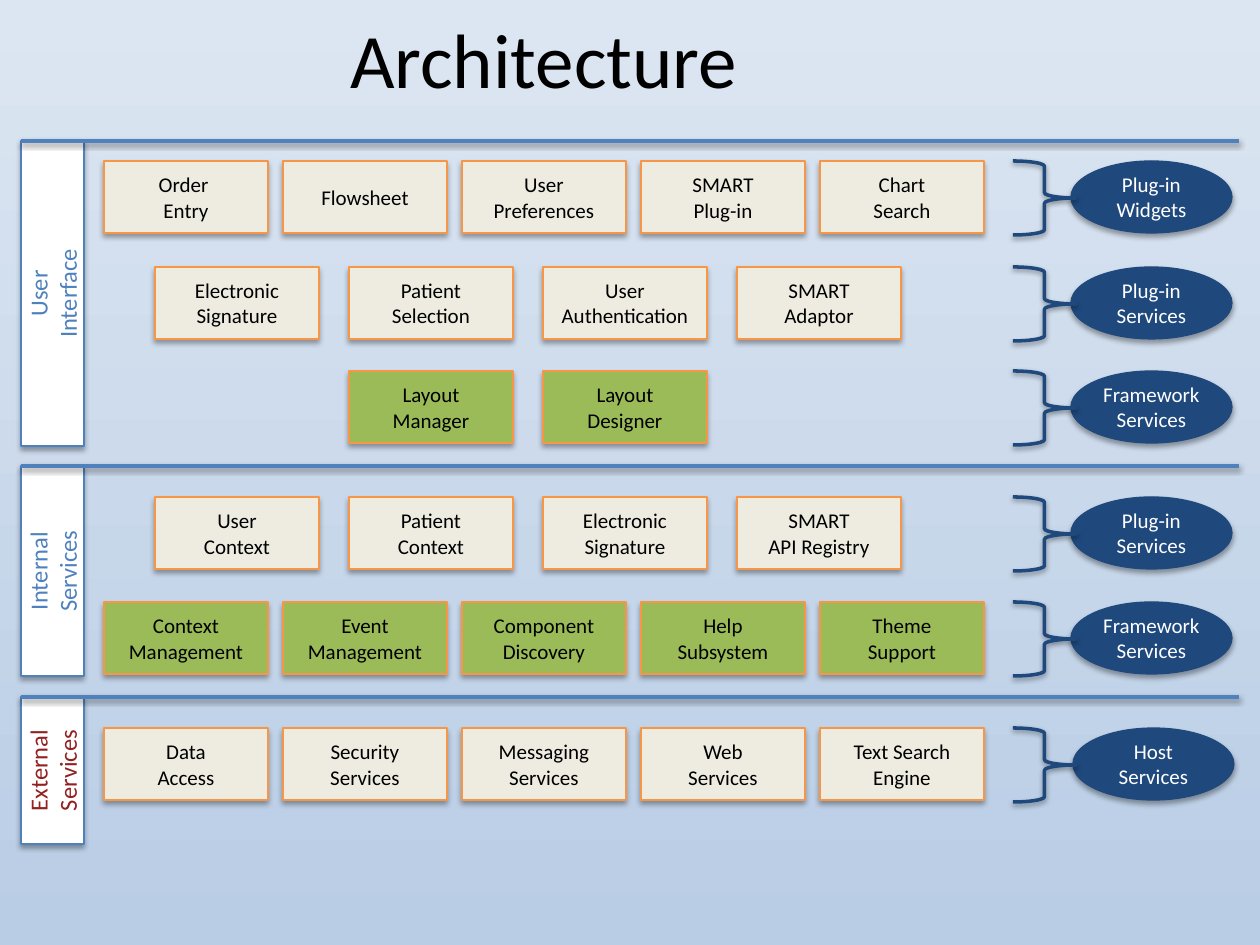
from dataclasses import dataclass

from lxml.etree import SubElement
from pptx import Presentation
from pptx.dml.color import RGBColor
from pptx.enum.shapes import MSO_CONNECTOR, MSO_SHAPE
from pptx.enum.text import MSO_ANCHOR, PP_ALIGN
from pptx.oxml.ns import qn
from pptx.util import Emu, Pt

EMU_PER_PX = 914400 / 126


@dataclass(frozen=True)
class Theme:
    font: str = "Calibri"
    sky_top: str = "DCE6F2"
    sky_bottom: str = "B9CDE5"
    black: str = "000000"
    white: str = "FFFFFF"
    blue: str = "4F81BD"
    navy: str = "1F497D"
    red: str = "922122"
    orange: str = "F79646"
    cream: str = "EEECE1"
    green: str = "9BBB59"
    title_size: int = 44
    tab_size: int = 14
    box_size: int = 12
    thin: float = 0.75
    thick: float = 2


THEME = Theme()


@dataclass(frozen=True)
class Grid:
    left: int
    pitch: int


@dataclass(frozen=True)
class Shadow:
    alpha: int
    distance: float


@dataclass(frozen=True)
class Layer:
    label: str
    top: int
    height: int
    color: str


@dataclass(frozen=True)
class Row:
    top: int
    grid: Grid
    boxes: tuple[str, ...]
    group: str
    fill: str = THEME.cream
    first_column: int = 0
    group_left: int = 1071


FIVE_COLUMNS = Grid(104, 179)
FOUR_COLUMNS = Grid(155, 194)
SOLID_SHADOW = Shadow(35, 1.8)
LINE_SHADOW = Shadow(38, 1.6)
LAYER_LEFT, LAYER_RIGHT, TAB_WIDTH = 21, 1239, 63
BOX_WIDTH, ROW_HEIGHT = 164, 72
GROUP_WIDTH = 161
BRACE_LEFT, BRACE_WIDTH, BRACE_HEIGHT = 1013, 63, 74

LAYERS = (
    Layer("User\nInterface", 141, 305, THEME.blue),
    Layer("Internal\nServices", 466, 210, THEME.blue),
    Layer("External\nServices", 697, 147, THEME.red),
)

ROWS = (
    Row(161, FIVE_COLUMNS,
        ("Order \nEntry", "Flowsheet", "User Preferences", "SMART\nPlug-in", "Chart\nSearch"),
        "Plug-in\nWidgets"),
    Row(267, FOUR_COLUMNS,
        ("Electronic\nSignature", "Patient\nSelection", "User\nAuthentication",
         "SMART\nAdaptor"),
        "Plug-in\nServices"),
    Row(371, FOUR_COLUMNS, ("Layout\nManager", "Layout\nDesigner"),
        "Framework\nServices", THEME.green, first_column=1),
    Row(497, FOUR_COLUMNS,
        ("User\nContext", "Patient\nContext", "Electronic\nSignature", "SMART\nAPI Registry"),
        "Plug-in\nServices"),
    Row(602, FIVE_COLUMNS,
        ("Context\nManagement", "Event\nManagement", "Component\nDiscovery",
         "Help\nSubsystem", "Theme\nSupport"),
        "Framework\nServices", THEME.green),
    Row(728, FIVE_COLUMNS,
        ("Data\nAccess", "Security\nServices", "Messaging\nServices", "Web\nServices",
         "Text Search Engine"),
        "Host\nServices", group_left=1073),
)


def px(length: int) -> Emu:
    return Emu(round(length * EMU_PER_PX))


def rgb(color: str) -> RGBColor:
    return RGBColor.from_string(color)


def add_shadow(effects, shadow: Shadow) -> None:
    outer = SubElement(effects, qn("a:outerShdw"), blurRad=str(Pt(3.1)),
                       dist=str(Pt(shadow.distance)), dir="5400000", rotWithShape="0")
    color = SubElement(outer, qn("a:srgbClr"), val=THEME.black)
    SubElement(color, qn("a:alpha"), val=str(shadow.alpha * 1000))


def set_line(line, color: str, width: float) -> None:
    line.color.rgb = rgb(color)
    line.width = Pt(width)


def write(frame, text: str, size: int, color: str, wrap: bool = True) -> None:
    frame_format = {"text": text, "word_wrap": wrap, "vertical_anchor": MSO_ANCHOR.MIDDLE}
    font_format = {"name": THEME.font, "size": Pt(size)}
    for attribute, value in frame_format.items():
        setattr(frame, attribute, value)
    for paragraph in frame.paragraphs:
        paragraph.alignment = PP_ALIGN.CENTER
        for run in paragraph.runs:
            for attribute, value in font_format.items():
                setattr(run.font, attribute, value)
            run.font.color.rgb = rgb(color)


def add_block(slide, kind: MSO_SHAPE, left: int, top: int, width: int, height: int,
              line: str, fill: str | None = None):
    """Add a shadowed shape; one without a fill is drawn as a thick outline."""
    block = slide.shapes.add_shape(kind, px(left), px(top), px(width), px(height))
    if fill:
        block.fill.solid()
        block.fill.fore_color.rgb = rgb(fill)
    else:
        block.fill.background()
    set_line(block.line, line, THEME.thin if fill else THEME.thick)
    block.shadow.inherit = False
    add_shadow(block.element.spPr.find(qn("a:effectLst")),
               SOLID_SHADOW if fill else LINE_SHADOW)
    return block


def draw_layer(slide, layer: Layer) -> None:
    tab = add_block(slide, MSO_SHAPE.RECTANGLE, LAYER_LEFT, layer.top, TAB_WIDTH,
                    layer.height, THEME.blue, THEME.white)
    write(tab.text_frame, layer.label, THEME.tab_size, layer.color)
    tab.element.txBody.find(qn("a:bodyPr")).set("vert", "vert270")

    divider = slide.shapes.add_connector(MSO_CONNECTOR.STRAIGHT, px(LAYER_LEFT),
                                         px(layer.top), px(LAYER_RIGHT), px(layer.top))
    set_line(divider.line, THEME.blue, THEME.thick)
    add_shadow(SubElement(divider.element.spPr, qn("a:effectLst")), LINE_SHADOW)


def draw_row(slide, row: Row) -> None:
    for column, label in enumerate(row.boxes, row.first_column):
        box = add_block(slide, MSO_SHAPE.RECTANGLE, row.grid.left + column * row.grid.pitch,
                        row.top, BOX_WIDTH, ROW_HEIGHT, THEME.orange, row.fill)
        write(box.text_frame, label, THEME.box_size, THEME.black)

    group = add_block(slide, MSO_SHAPE.OVAL, row.group_left, row.top, GROUP_WIDTH,
                      ROW_HEIGHT, THEME.navy, THEME.navy)
    write(group.text_frame, row.group, THEME.box_size, THEME.white, wrap=False)
    add_block(slide, MSO_SHAPE.RIGHT_BRACE, BRACE_LEFT, row.top, BRACE_WIDTH,
              BRACE_HEIGHT, THEME.navy)


def main() -> None:
    deck = Presentation()
    deck.slide_width, deck.slide_height = px(1260), px(945)
    slide = deck.slides.add_slide(deck.slide_layouts[6])

    # Background fading downwards
    sky = slide.background.fill
    sky.gradient()
    sky.gradient_angle = 270
    for stop, color in zip(sky.gradient_stops, (THEME.sky_top, THEME.sky_bottom)):
        stop.color.rgb = rgb(color)

    # Title
    title = slide.shapes.add_textbox(px(-23), px(1), px(1134), px(113))
    write(title.text_frame, "Architecture", THEME.title_size, THEME.black)

    # Layers with their tabs and dividers
    for layer in LAYERS:
        draw_layer(slide, layer)

    # Components, each row gathered by a brace
    for row in ROWS:
        draw_row(slide, row)

    deck.save("out.pptx")


if __name__ == "__main__":
    main()
